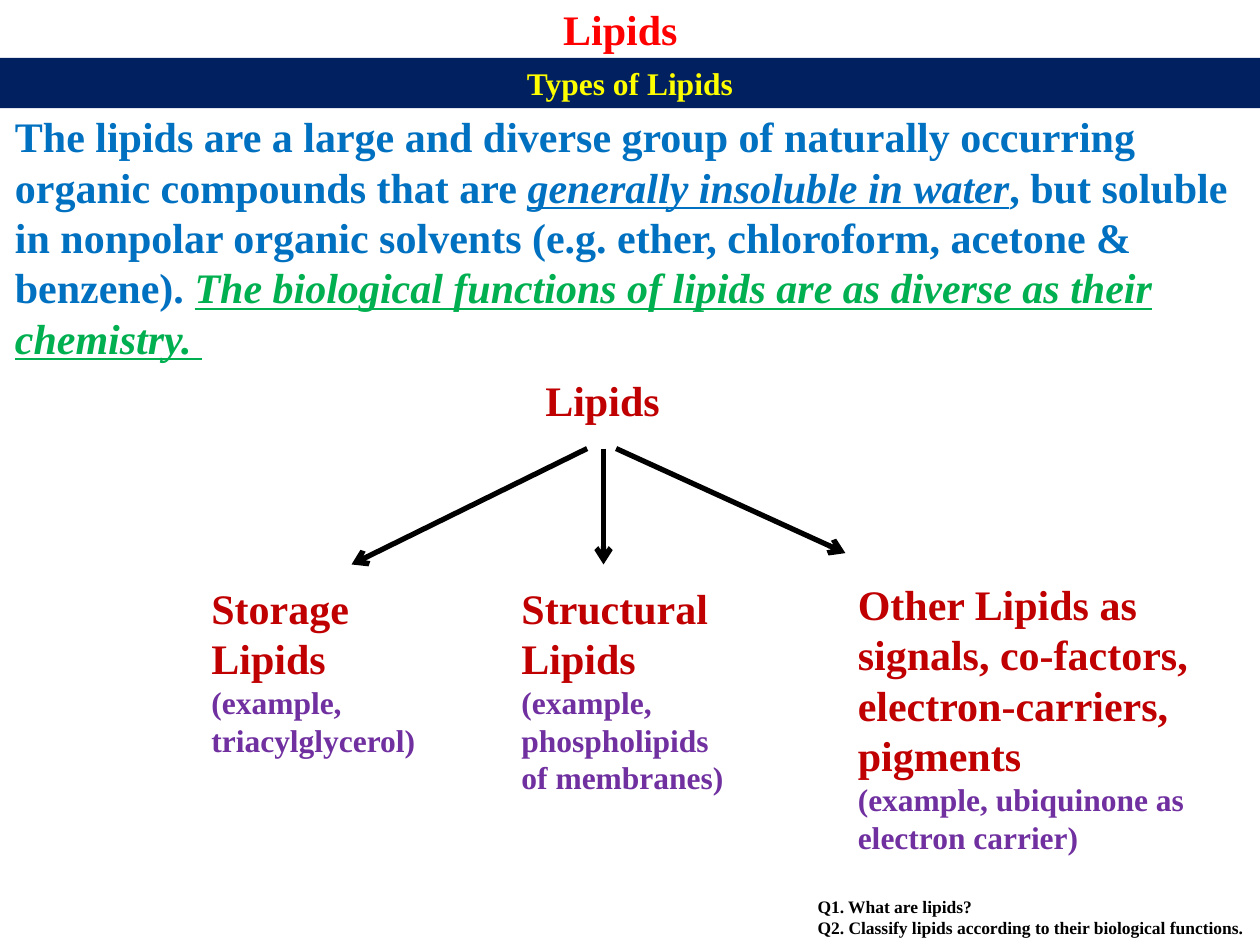
from lxml.etree import SubElement
from pptx import Presentation
from pptx.dml.color import RGBColor
from pptx.enum.shapes import MSO_CONNECTOR, MSO_SHAPE
from pptx.enum.text import MSO_ANCHOR, PP_ALIGN
from pptx.oxml.ns import qn
from pptx.util import Inches, Pt

COLORS = {
    "title": "FF0000", "band": "002060", "band_text": "FFFF00",
    "definition": "0070C0", "function": "00B050", "class": "C00000",
    "example": "7030A0", "black": "000000", "white": "FFFFFF",
}


def style(run, size, color, emphasis=False):
    run.font.name = "Times New Roman"
    run.font.size = Pt(size)
    run.font.bold = True
    run.font.color.rgb = RGBColor.from_string(COLORS[color])
    if emphasis:
        run.font.italic = True
        run.font.underline = True


def write(shape, lines, wrap=True, align=PP_ALIGN.LEFT):
    frame = shape.text_frame
    frame.text = "\n".join(text for text, size, color in lines)
    frame.word_wrap = wrap
    frame.vertical_anchor = MSO_ANCHOR.TOP
    for paragraph, (text, size, color) in zip(frame.paragraphs, lines):
        paragraph.alignment = align
        style(paragraph.runs[0], size, color)


prs = Presentation()
prs.slide_width, prs.slide_height = Inches(10), Inches(7.5)
slide = prs.slides.add_slide(prs.slide_layouts[5])

title = slide.shapes.title
title.left, title.top = Inches(4.37), Inches(-0.02)
title.width, title.height = Inches(1.25), Inches(0.5)
write(title, [("Lipids", 24, "title")])

definition = slide.shapes.add_textbox(Inches(0.02), Inches(0.83), Inches(9.95), Inches(2.12))
definition.text_frame.word_wrap = True
for text, color, emphasis in [
    ("The lipids are a large and diverse group of naturally occurring organic compounds that are ",
     "definition", False),
    ("generally insoluble in water", "definition", True),
    (", but soluble in nonpolar organic solvents (e.g. ether, chloroform, acetone & benzene). ",
     "definition", False),
    ("The biological functions of lipids are as diverse as their chemistry. ", "function", True),
]:
    run = definition.text_frame.paragraphs[0].add_run()
    run.text = text
    style(run, 24, color, emphasis)

band = slide.shapes.add_shape(MSO_SHAPE.RECTANGLE, 0, Inches(0.46), Inches(10), Inches(0.4))
band.shadow.inherit = False
band.fill.solid()
band.fill.fore_color.rgb = RGBColor.from_string(COLORS["band"])
band.line.fill.background()
write(band, [("Types of Lipids", 18, "band_text")], align=PP_ALIGN.CENTER)

classification = slide.shapes.add_group_shape()
for left, top, width, height, wrap, names, examples in [
    (4.23, 2.92, 1.12, 0.5, False, ["Lipids"], []),
    (1.58, 4.57, 1.84, 1.51, False, ["Storage", "Lipids"], ["(example,", "triacylglycerol)"]),
    (4.04, 4.57, 1.82, 1.82, False, ["Structural", "Lipids"],
     ["(example,", "phospholipids", "of membranes)"]),
    (6.71, 4.54, 3.04, 2.32, True,
     ["Other Lipids as signals, co-factors, electron-carriers, pigments"],
     ["(example, ubiquinone as electron carrier)"]),
]:
    lipid_class = classification.shapes.add_shape(
        MSO_SHAPE.RECTANGLE, Inches(left), Inches(top), Inches(width), Inches(height))
    lipid_class.shadow.inherit = False
    lipid_class.fill.background()
    lipid_class.line.color.rgb = RGBColor.from_string(COLORS["white"])
    lipid_class.line.width = Pt(0.75)
    lines = [(name, 24, "class") for name in names]
    lines += [(example, 18, "example") for example in examples]
    write(lipid_class, lines, wrap)

for start_x, end_x, end_y in [(4.66, 2.79, 4.48), (4.79, 4.79, 4.48), (4.89, 6.71, 4.39)]:
    branch = classification.shapes.add_connector(
        MSO_CONNECTOR.STRAIGHT, Inches(start_x), Inches(3.56), Inches(end_x), Inches(end_y))
    branch.line.color.rgb = RGBColor.from_string(COLORS["black"])
    branch.line.width = Pt(3)
    SubElement(branch.line._get_or_add_ln(), qn("a:tailEnd"), type="arrow")
    SubElement(branch._element.spPr, qn("a:effectLst"))

questions = slide.shapes.add_textbox(Inches(6.39), Inches(7.06), Inches(3.61), Inches(0.44))
write(questions, [
    ("Q1. What are lipids?", 10, "black"),
    ("Q2. Classify lipids according to their biological functions.", 10, "black"),
])

prs.save("out.pptx")
